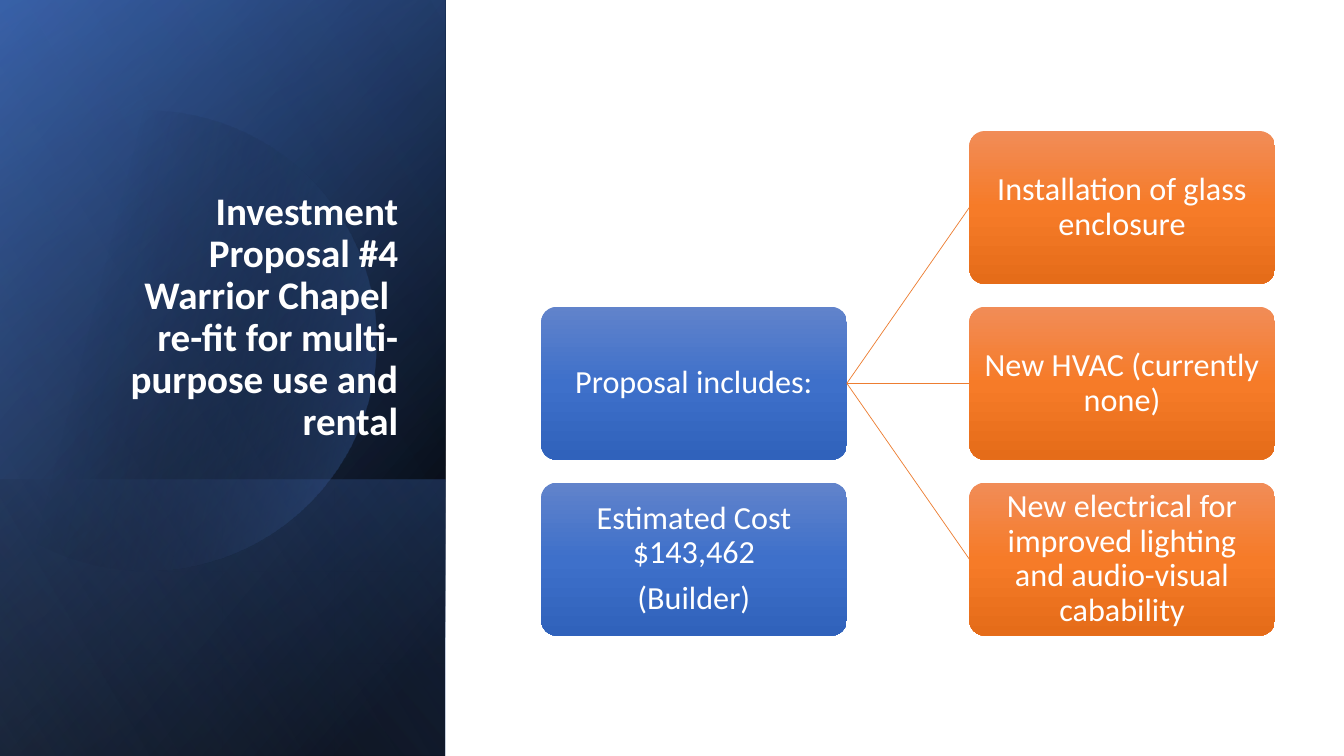
from math import acos, cos, pi, sin

from lxml import etree
from pptx import Presentation
from pptx.dml.color import RGBColor
from pptx.enum.shapes import MSO_CONNECTOR, MSO_SHAPE
from pptx.enum.text import MSO_ANCHOR, MSO_AUTO_SIZE, PP_ALIGN
from pptx.oxml.ns import qn
from pptx.util import Pt

RECTANGLE, ROUNDED = MSO_SHAPE.RECTANGLE, MSO_SHAPE.ROUNDED_RECTANGLE
STRAIGHT = MSO_CONNECTOR.STRAIGHT
CENTER, RIGHT = PP_ALIGN.CENTER, PP_ALIGN.RIGHT
MIDDLE, BOTTOM = MSO_ANCHOR.MIDDLE, MSO_ANCHOR.BOTTOM
RIGHT_SITE, LEFT_SITE = 3, 1

COLORS = {
    "white": "FFFFFF", "black": "000000", "navy": "2F5597",
    "blue": "4472C4", "pale": "8FAADC", "line": "ED7D31",
    "blue top": "6183CB", "blue middle": "3E70CA", "blue foot": "3062BB",
    "orange top": "F18C57", "orange middle": "F67B28", "orange foot": "E56C19",
}


class Slide:
    font = "Calibri"
    title_size, box_size = 27.9, 23

    def __init__(self, deck):
        self.page = deck.slides.add_slide(deck.slide_layouts[5])

    def gradient(self, shape, angle, stops):
        """Fill with (position %, colour, opacity %) stops; angle is clockwise."""
        shape.shadow.inherit = False
        shape.line.fill.background()
        shape.fill.gradient()
        fill = shape.element.spPr.find(qn("a:gradFill"))
        stop_list = fill.find(qn("a:gsLst"))
        for old_stop in list(stop_list):
            stop_list.remove(old_stop)
        for position, color, opacity in stops:
            stop = etree.SubElement(stop_list, qn("a:gs"), pos=str(position * 1000))
            rgb = etree.SubElement(stop, qn("a:srgbClr"), val=COLORS[color])
            if opacity < 100:
                etree.SubElement(rgb, qn("a:alpha"), val=str(opacity * 1000))
        direction = fill.find(qn("a:lin"))
        direction.set("ang", str(angle * 60000))
        direction.set("scaled", "0")

    def panel(self, top, width, height, angle, stops):
        shape = self.page.shapes.add_shape(RECTANGLE, 0, Pt(top), Pt(width), Pt(height))
        self.gradient(shape, angle, stops)

    def disc(self, center_x, center_y, radius, angle, stops):
        """Circle cut straight at the left edge of the page."""
        reach, steps = pi - acos(center_x / radius), 120
        turns = [reach * (2 * step / steps - 1) for step in range(steps + 1)]
        points = [(Pt(center_x + radius * cos(turn)), Pt(center_y + radius * sin(turn)))
                  for turn in turns]
        outline = self.page.shapes.build_freeform(*points[0])
        outline.add_line_segments(points[1:], close=True)
        self.gradient(outline.convert_to_shape(), angle, stops)

    def span(self, para, text, size, bold=False):
        span = para.add_run()
        span.text = text
        span.font.name, span.font.size, span.font.bold = self.font, Pt(size), bold
        span.font.color.rgb = RGBColor.from_string(COLORS["white"])

    def title(self, left, top, width, height, lines):
        box = self.page.shapes.title
        box.left, box.top, box.width, box.height = Pt(left), Pt(top), Pt(width), Pt(height)
        box.element.getparent().append(box.element)  # in front of the panels
        frame = box.text_frame
        frame.word_wrap, frame.auto_size = True, MSO_AUTO_SIZE.NONE
        frame.vertical_anchor = BOTTOM
        para = frame.paragraphs[0]
        para.alignment, para.line_spacing = RIGHT, 0.9
        for index, line in enumerate(lines):
            if index:
                para.add_line_break()
            self.span(para, line, self.title_size, bold=True)

    def box(self, left, top, width, height, tone, texts):
        box = self.page.shapes.add_shape(ROUNDED, Pt(left), Pt(top), Pt(width), Pt(height))
        box.adjustments[0] = 0.1
        self.gradient(box, 90, [(0, tone + " top", 100), (50, tone + " middle", 100),
                                (100, tone + " foot", 100)])
        frame = box.text_frame
        frame.word_wrap, frame.vertical_anchor = True, MIDDLE
        frame.margin_left = frame.margin_right = Pt(4.3)
        frame.margin_top = frame.margin_bottom = Pt(4.3)
        for index, text in enumerate(texts):
            para = frame.add_paragraph() if index else frame.paragraphs[0]
            para.alignment, para.line_spacing = CENTER, 0.9
            para.space_before = Pt(8 if index else 0)
            self.span(para, text, self.box_size)
        return box

    def link(self, start, end):
        line = self.page.shapes.add_connector(STRAIGHT, 0, 0, 0, 0)
        line.begin_connect(start, RIGHT_SITE)
        line.end_connect(end, LEFT_SITE)
        line.line.width = Pt(0.5)
        line.line.color.rgb = RGBColor.from_string(COLORS["line"])
        etree.SubElement(line.element.spPr, qn("a:effectLst"))


def main():
    deck = Presentation()
    deck.slide_width, deck.slide_height = Pt(960), Pt(540)
    slide = Slide(deck)

    panel_width, band_top = 318, 342.7
    slide.panel(0, panel_width, 540, 220, [(8, "black", 100), (100, "navy", 100)])
    slide.panel(0, panel_width, 540, 240, [(0, "black", 0), (99, "blue", 46)])
    slide.panel(band_top, panel_width, 540 - band_top, 140,
                [(2, "blue", 29), (100, "black", 30)])
    slide.disc(104.4, 243.4, 164.2, 14, [(29, "black", 0), (100, "blue", 43)])
    slide.panel(0, panel_width, 540, 150, [(0, "black", 0), (99, "pale", 11)])
    slide.title(46.1, 132.5, 245.5, 188.6,
                ["Investment Proposal #4", "Warrior Chapel ",
                 "re-fit for multi-purpose use and rental"])

    box_width, box_height = 218.3, 109.2
    blue_left, orange_left = 386.6, 692.4
    rows = [93.6 + 125.6 * row for row in range(3)]
    proposal = slide.box(blue_left, rows[1], box_width, box_height, "blue",
                         ["Proposal includes:"])
    slide.box(blue_left, rows[2], box_width, box_height, "blue",
              ["Estimated Cost $143,462", "(Builder)"])
    items = ["Installation of glass enclosure", "New HVAC (currently none)",
             "New electrical for improved lighting and audio-visual cabability"]
    for top, item in zip(rows, items):
        part = slide.box(orange_left, top, box_width, box_height, "orange", [item])
        slide.link(proposal, part)

    deck.save("out.pptx")


if __name__ == "__main__":
    main()
